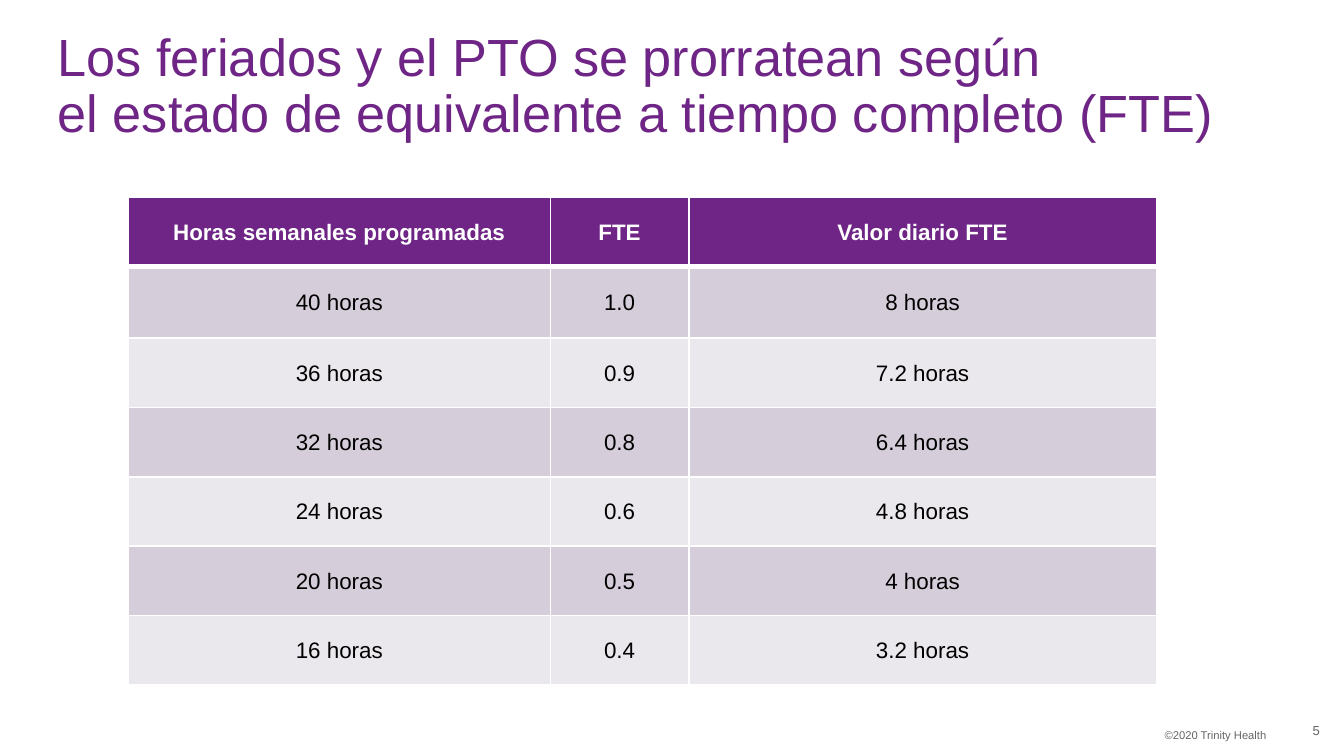
from dataclasses import dataclass

from lxml.etree import SubElement
from pptx import Presentation
from pptx.dml.color import RGBColor
from pptx.enum.text import MSO_ANCHOR, MSO_AUTO_SIZE, PP_ALIGN
from pptx.oxml.ns import qn
from pptx.util import Inches, Pt

PURPLE = RGBColor(0x6E, 0x25, 0x85)
GRAY = RGBColor(0x66, 0x66, 0x66)
WHITE = RGBColor(0xFF, 0xFF, 0xFF)
BLACK = RGBColor(0x00, 0x00, 0x00)
BANDS = (RGBColor(0xD5, 0xCD, 0xD9), RGBColor(0xEB, 0xE8, 0xED))
SLIDE_WIDTH = Inches(10)
SLIDE_HEIGHT = SLIDE_WIDTH * 9 // 16
FONT = "Arial"
HARD_SPACE = chr(160)


def across(percent: float) -> int:
    return round(SLIDE_WIDTH * percent / 100)


def down(percent: float) -> int:
    return round(SLIDE_HEIGHT * percent / 100)


@dataclass(frozen=True)
class Area:
    left: float
    top: float
    width: float
    height: float

    def lengths(self) -> tuple[int, int, int, int]:
        return across(self.left), down(self.top), across(self.width), down(self.height)


@dataclass(frozen=True)
class FooterItem:
    text: str
    area: Area
    size: float
    right_inset: float
    anchor: MSO_ANCHOR


@dataclass(frozen=True)
class Schedule:
    weekly: str
    fte: str
    daily: str

    def entries(self) -> tuple[str, str, str]:
        return f"{self.weekly}{HARD_SPACE}horas", self.fte, f"{self.daily}{HARD_SPACE}horas"


TITLE = "Los feriados y el PTO se prorratean según \vel estado de equivalente a tiempo completo (FTE)"
TITLE_AREA = Area(4.3, 6.7, 90, 9.78)
TABLE_AREA = Area(9.55, 26.13, 76.5, 64.5)
COLUMN_SHARES = (31.4, 10.3, 34.8)
ROW_SHARE, FIRST_SCHEDULE_SHARE = 9.18, 9.42
HEADINGS = ("Horas semanales programadas", "FTE", "Valor diario FTE")
SCHEDULES = (
    Schedule("40", "1.0", "8"),
    Schedule("36", "0.9", "7.2"),
    Schedule("32", "0.8", "6.4"),
    Schedule("24", "0.6", "4.8"),
    Schedule("20", "0.5", "4"),
    Schedule("16", "0.4", "3.2"),
)
FOOTER = (
    FooterItem("©2020 Trinity Health", Area(53.3, 95.4, 41.9, 3.56), 6, 0.1, MSO_ANCHOR.TOP),
    FooterItem("5", Area(93.8, 93.95, 4.4, 5.33), 7, 0, MSO_ANCHOR.MIDDLE),
)


def format_runs(paragraph, size: float, color: RGBColor, bold: bool = False) -> None:
    for run in paragraph.runs:
        run.font.name = FONT
        run.font.size = Pt(size)
        run.font.bold = bold
        run.font.color.rgb = color


def draw_title(slide) -> None:
    title = slide.shapes.title
    title.left, title.top, title.width, title.height = TITLE_AREA.lengths()
    frame = title.text_frame
    frame.text = TITLE
    frame.word_wrap = True
    frame.auto_size = MSO_AUTO_SIZE.NONE
    frame.vertical_anchor = MSO_ANCHOR.MIDDLE
    frame.margin_left = frame.margin_right = frame.margin_top = frame.margin_bottom = 0
    heading = frame.paragraphs[0]
    heading.alignment = PP_ALIGN.LEFT
    heading.line_spacing = 0.9
    format_runs(heading, 28, PURPLE)


def draw_footer(slide, item: FooterItem) -> None:
    frame = slide.shapes.add_textbox(*item.area.lengths()).text_frame
    frame.word_wrap = True
    frame.vertical_anchor = item.anchor
    frame.margin_right = Inches(item.right_inset)
    frame.text = item.text
    frame.paragraphs[0].alignment = PP_ALIGN.RIGHT
    format_runs(frame.paragraphs[0], item.size, GRAY)


def add_borders(cell, top: float, bottom: float) -> None:
    properties = cell._tc.get_or_add_tcPr()
    widths = {"a:lnL": 1, "a:lnR": 1, "a:lnT": top, "a:lnB": bottom}
    for index, (side, width) in enumerate(widths.items()):
        line = SubElement(properties, qn(side), w=str(Pt(width)))
        fill = SubElement(line, qn("a:solidFill"))
        SubElement(fill, qn("a:srgbClr"), val=str(WHITE))
        properties.insert(index, line)


def draw_cell(cell, text: str, row: int) -> None:
    is_header = row == 0
    cell.text = text
    cell.vertical_anchor = MSO_ANCHOR.MIDDLE
    cell.margin_left = cell.margin_right = cell.margin_top = Inches(0.01)
    cell.margin_bottom = 0
    cell.fill.solid()
    cell.fill.fore_color.rgb = PURPLE if is_header else BANDS[(row - 1) % 2]
    add_borders(cell, top=3 if row == 1 else 1, bottom=3 if is_header else 1)
    entry = cell.text_frame.paragraphs[0]
    entry.alignment = PP_ALIGN.CENTER
    format_runs(entry, 12, WHITE if is_header else BLACK, is_header)


def draw_table(slide) -> None:
    records = (HEADINGS, *(schedule.entries() for schedule in SCHEDULES))
    table = slide.shapes.add_table(len(records), len(HEADINGS), *TABLE_AREA.lengths()).table
    for column, share in zip(table.columns, COLUMN_SHARES):
        column.width = across(share)
    for row, record in enumerate(records):
        table.rows[row].height = down(FIRST_SCHEDULE_SHARE if row == 1 else ROW_SHARE)
        for column, text in enumerate(record):
            draw_cell(table.cell(row, column), text, row)


def main() -> None:
    presentation = Presentation()
    presentation.slide_width, presentation.slide_height = SLIDE_WIDTH, SLIDE_HEIGHT
    slide = presentation.slides.add_slide(presentation.slide_layouts[5])
    draw_title(slide)
    for item in FOOTER:
        draw_footer(slide, item)
    draw_table(slide)
    presentation.save("out.pptx")


if __name__ == "__main__":
    main()
